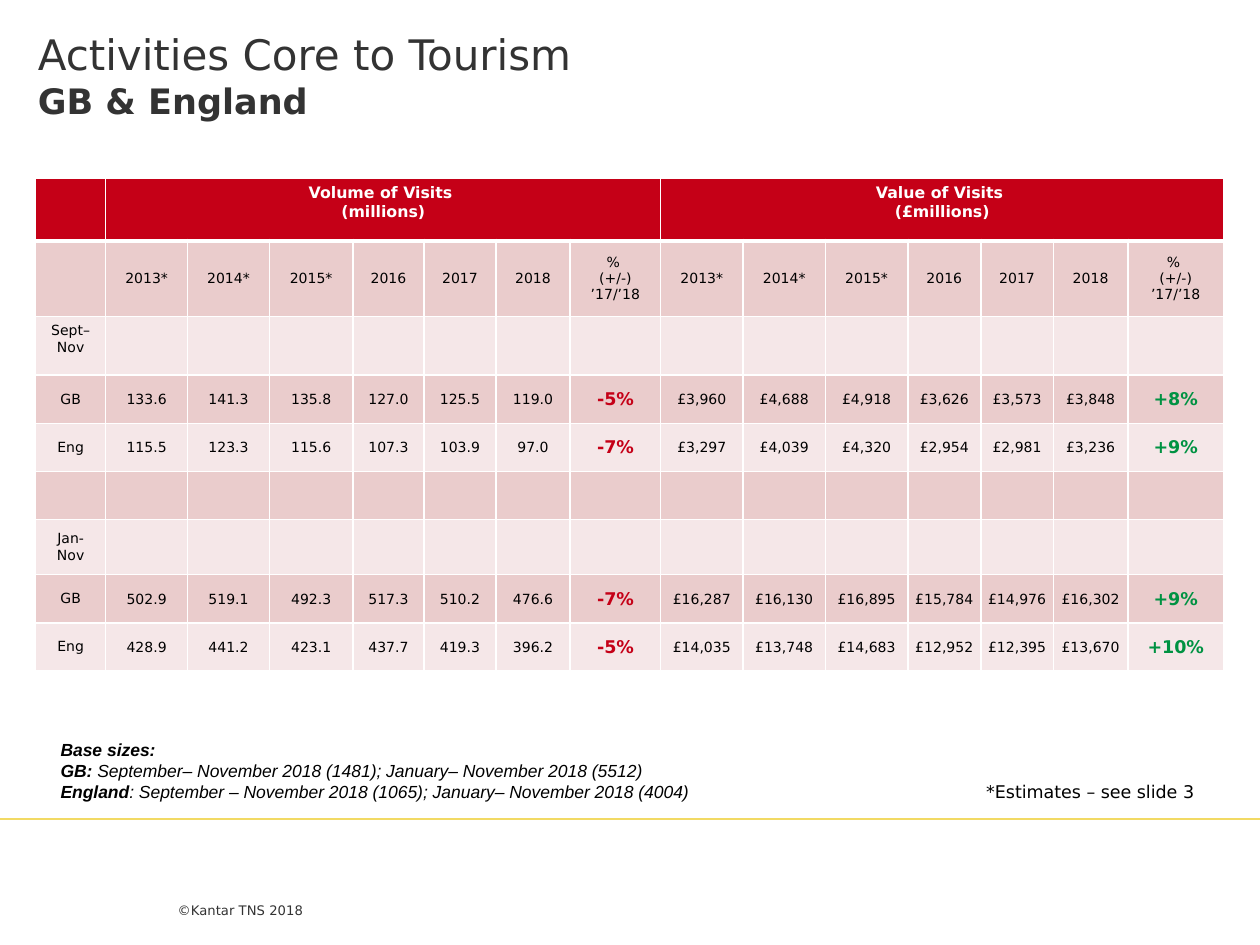
from dataclasses import dataclass

from lxml.etree import SubElement
from pptx import Presentation
from pptx.dml.color import RGBColor
from pptx.enum.shapes import MSO_CONNECTOR as Connector
from pptx.enum.text import MSO_ANCHOR as Anchor, PP_ALIGN as Align
from pptx.oxml.ns import qn
from pptx.util import Pt


@dataclass(frozen=True)
class Theme:
    font: str = "DejaVu Sans"
    note_font: str = "Arial"
    title: float = 24
    subtitle: float = 20
    note: float = 10
    header: float = 9
    body: float = 8
    footer: float = 7.5
    grey: str = "333333"
    black: str = "000000"
    white: str = "FFFFFF"
    red: str = "C50017"
    green: str = "009242"
    band_dark: str = "EACCCC"
    band_light: str = "F5E7E8"
    rule_dark: str = "262626"
    rule_gold: str = "F2DA64"


THEME = Theme()


@dataclass(frozen=True)
class Style:
    size: float
    color: str = THEME.black
    bold: bool = False
    italic: bool = False
    font: str = THEME.font


@dataclass(frozen=True)
class Span:
    text: str
    style: Style


@dataclass(frozen=True)
class TextBox:
    left: float
    top: float
    width: float
    height: float
    paras: list[list[Span]]
    insets: tuple[float, float, float, float] = (7.2, 3.6, 7.2, 3.6)
    anchor: Anchor = Anchor.TOP
    wrap: bool = True


@dataclass(frozen=True)
class Rule:
    start: float
    end: float
    color: str
    weight: float


BODY = Style(THEME.body)
HEADER = Style(THEME.header, THEME.white, bold=True)
NOTE = Style(THEME.note, italic=True, font=THEME.note_font)
NOTE_BOLD = Style(THEME.note, bold=True, italic=True, font=THEME.note_font)

RULE_TOP = 468
RULES = [Rule(22.5, 697, THEME.rule_dark, 0.75), Rule(0, 720, THEME.rule_gold, 1.5)]

BOXES = [
    TextBox(101.5, 498, 76.5, 42,
            [[Span("©Kantar TNS 2018", Style(THEME.footer, THEME.grey))]],
            insets=(0, 0, 0, 21), anchor=Anchor.BOTTOM),
    TextBox(0, 0, 400, 101.5,
            [[Span("Activities Core to Tourism\v", Style(THEME.title, THEME.grey)),
              Span("GB & England", Style(THEME.subtitle, THEME.grey, bold=True))]],
            insets=(21.6, 16.5, 21.6, 0)),
    TextBox(27.5, 418.5, 607.5, 44,
            [[Span("Base sizes: \vGB:", NOTE_BOLD),
              Span(" September– November 2018 (1481); January– November 2018 (5512)", NOTE)],
             [Span("England", NOTE_BOLD),
              Span(": September – November 2018 (1065); January– November 2018 (4004)", NOTE)]]),
    TextBox(556.5, 443, 138, 19.5,
            [[Span("*Estimates – see slide 3", Style(THEME.note))]], wrap=False),
]

# Table content and grid
TABLE_LEFT, TABLE_TOP = 20.4, 101.7
COLUMN_WIDTHS = [40, 46.8, 46.8, 47.7, 40.7, 41, 42.5, 51.7,
                 47.1, 47.1, 47.1, 41.7, 41.5, 42.5, 54.8]
ROW_HEIGHTS = [36, 43.2, 33.5, 27.5, 27.5, 27.5, 31.5, 27.7, 27.5]
GROUP_SIZE = 7
GROUPS = ["Volume of Visits \n(millions)", "Value of Visits \n(£millions)"]
PERIODS = ["2013*", "2014*", "2015*", "2016", "2017", "2018", "% \n(+/-) ’17/’18"]
ROWS = [
    ["", *PERIODS, *PERIODS],
    ["Sept–Nov"],
    ["GB", "133.6", "141.3", "135.8", "127.0", "125.5", "119.0", "-5%",
     "£3,960", "£4,688", "£4,918", "£3,626", "£3,573", "£3,848", "+8%"],
    ["Eng", "115.5", "123.3", "115.6", "107.3", "103.9", "97.0", "-7%",
     "£3,297", "£4,039", "£4,320", "£2,954", "£2,981", "£3,236", "+9%"],
    [],
    ["Jan-Nov"],
    ["GB", "502.9", "519.1", "492.3", "517.3", "510.2", "476.6", "-7%",
     "£16,287", "£16,130", "£16,895", "£15,784", "£14,976", "£16,302", "+9%"],
    ["Eng", "428.9", "441.2", "423.1", "437.7", "419.3", "396.2", "-5%",
     "£14,035", "£13,748", "£14,683", "£12,952", "£12,395", "£13,670", "+10%"],
]


def format_span(span, style: Style) -> None:
    span.font.name = style.font
    span.font.size = Pt(style.size)
    span.font.bold = style.bold
    span.font.italic = style.italic
    span.font.color.rgb = RGBColor.from_string(style.color)


def draw_box(page, spec_box: TextBox) -> None:
    box = page.shapes.add_textbox(Pt(spec_box.left), Pt(spec_box.top),
                                  Pt(spec_box.width), Pt(spec_box.height))
    frame = box.text_frame
    frame.word_wrap = spec_box.wrap
    frame.vertical_anchor = spec_box.anchor
    (frame.margin_left, frame.margin_top,
     frame.margin_right, frame.margin_bottom) = map(Pt, spec_box.insets)
    frame.text = "\n".join("".join(s.text for s in spans) for spans in spec_box.paras)
    for para, spans in zip(frame.paragraphs, spec_box.paras):
        para.clear()
        for piece in spans:
            # A vertical tab marks a line break inside a paragraph
            for index, line in enumerate(piece.text.split("\v")):
                if index:
                    para.add_line_break()
                if line:
                    span = para.add_run()
                    span.text = line
                    format_span(span, piece.style)


def draw_rule(page, rule: Rule) -> None:
    line = page.shapes.add_connector(Connector.STRAIGHT, Pt(rule.start), Pt(RULE_TOP),
                                     Pt(rule.end), Pt(RULE_TOP))
    line.line.color.rgb = RGBColor.from_string(rule.color)
    line.line.width = Pt(rule.weight)
    SubElement(line._element.spPr, qn("a:effectLst"))


def add_borders(cell, bottom: float, top: float) -> None:
    properties = cell._tc.get_or_add_tcPr()
    for side, weight in (("L", 1), ("R", 1), ("T", top), ("B", bottom)):
        border = SubElement(properties, qn(f"a:ln{side}"), w=str(Pt(weight)))
        fill = SubElement(border, qn("a:solidFill"))
        SubElement(fill, qn("a:srgbClr"), val=THEME.white)


def fill_cell(cell, text: str, style: Style, fill: str, anchor: Anchor,
              tight: bool = False, top: float = 1, bottom: float = 1) -> None:
    add_borders(cell, bottom, top)
    cell.fill.solid()
    cell.fill.fore_color.rgb = RGBColor.from_string(fill)
    cell.vertical_anchor = anchor
    if tight:
        cell.margin_left = cell.margin_top = cell.margin_right = Pt(0.7)
        cell.margin_bottom = Pt(0)
    cell.text_frame.text = text
    for para in cell.text_frame.paragraphs:
        para.alignment = Align.CENTER
        for span in para.runs:
            format_span(span, style)


def value_style(text: str) -> Style:
    if text.startswith(("+", "-")):
        return Style(THEME.note, THEME.green if text[0] == "+" else THEME.red, bold=True)
    return BODY


def draw_table(page) -> None:
    table = page.shapes.add_table(len(ROW_HEIGHTS), len(COLUMN_WIDTHS),
                                  Pt(TABLE_LEFT), Pt(TABLE_TOP),
                                  Pt(sum(COLUMN_WIDTHS)), Pt(sum(ROW_HEIGHTS))).table
    table.first_row = table.horz_banding = False
    for column, width in zip(table.columns, COLUMN_WIDTHS):
        column.width = Pt(width)
    for row, height in zip(table.rows, ROW_HEIGHTS):
        row.height = Pt(height)

    # Group headings
    headings = {1 + GROUP_SIZE * i: text for i, text in enumerate(GROUPS)}
    for column in range(len(COLUMN_WIDTHS)):
        fill_cell(table.cell(0, column), headings.get(column, ""), HEADER,
                  THEME.red, Anchor.TOP, bottom=3)
    for column in headings:
        table.cell(0, column).merge(table.cell(0, column + GROUP_SIZE - 1))

    # Banded body
    for row, values in enumerate(ROWS, start=1):
        fill = THEME.band_dark if row % 2 else THEME.band_light
        for column in range(len(COLUMN_WIDTHS)):
            text = values[column] if column < len(values) else ""
            fill_cell(table.cell(row, column), text, value_style(text), fill,
                      Anchor.TOP if text == "Sept–Nov" else Anchor.MIDDLE,
                      tight=not text or (row > 1 and column > 0),
                      top=3 if row == 1 else 1)


def main() -> None:
    deck = Presentation()
    deck.slide_width, deck.slide_height = Pt(720), Pt(540)
    page = deck.slides.add_slide(deck.slide_layouts[6])
    for rule in RULES:
        draw_rule(page, rule)
    draw_table(page)
    for box in BOXES:
        draw_box(page, box)
    deck.save("out.pptx")


if __name__ == "__main__":
    main()
